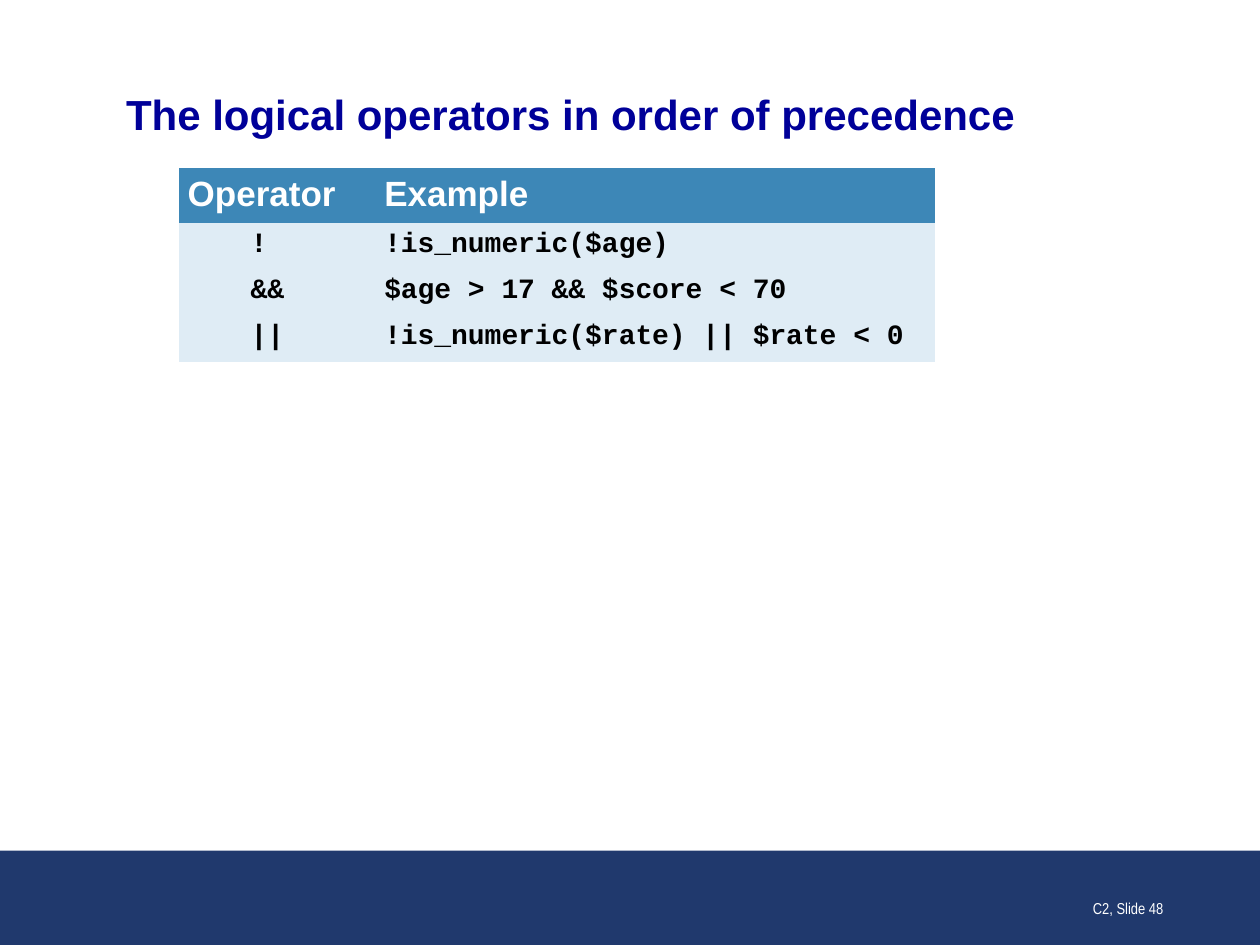
import dataclasses

import pptx
import pptx.dml.color
import pptx.enum.shapes
import pptx.enum.text
import pptx.oxml.ns
import pptx.util

ALIGN = pptx.enum.text.PP_ALIGN
ANCHOR = pptx.enum.text.MSO_ANCHOR
NO_STYLE_NO_GRID = "{2D5ABB26-0587-4C30-8999-92F81FD0307C}"
WIDTH, HEIGHT = pptx.util.Inches(10), pptx.util.Inches(7.5)


@dataclasses.dataclass(frozen=True)
class Theme:
    """Colours, fonts and type sizes of the slide."""
    title: str = "000099"
    band: str = "20396D"
    header: str = "3D87B7"
    body: str = "DFECF5"
    light: str = "FFFFFF"
    dark: str = "000000"
    sans: str = "Arial"
    narrow: str = "Arial Narrow"
    code: str = "Courier New"
    title_size: int = 24
    header_size: int = 20
    code_size: int = 16
    footer_size: int = 9


THEME = Theme()
ROWS = [
    ("Operator", "Example"),
    ("\t!", "!is_numeric($age)"),
    ("\t&&", "$age > 17 && $score < 70"),
    ("\t||", "!is_numeric($rate) || $rate < 0"),
]


def share(left, top, width, height):
    """Turn shares of the slide's size into a box in EMU."""
    return tuple(round(part * full) for part, full in
                 zip((left, top, width, height), (WIDTH, HEIGHT) * 2))


def set_fill(target, color):
    """Fill a shape or cell with one solid colour."""
    target.fill.solid()
    target.fill.fore_color.rgb = pptx.dml.color.RGBColor.from_string(color)


def write(tf, text, *, font, size, color, bold=False, align=ALIGN.LEFT,
          anchor=None):
    """Put one formatted paragraph into a text frame."""
    p = tf.paragraphs[0]
    p.alignment = align
    r = p.add_run()
    r.text = text
    r.font.name, r.font.size, r.font.bold = font, pptx.util.Pt(size), bold
    r.font.color.rgb = pptx.dml.color.RGBColor.from_string(color)
    if anchor is not None:
        tf.vertical_anchor = anchor


def add_title(s, box, text):
    """Place and format the title placeholder."""
    sp = s.shapes.title
    sp.left, sp.top, sp.width, sp.height = box
    tf = sp.text_frame
    tf.margin_left = tf.margin_right = tf.margin_top = tf.margin_bottom = 0
    tf.auto_size = pptx.enum.text.MSO_AUTO_SIZE.NONE
    write(tf, text, font=THEME.sans, size=THEME.title_size,
          color=THEME.title, bold=True, anchor=ANCHOR.MIDDLE)


def add_operator_table(s, box, rows):
    """Place the operator table, its header row a little taller."""
    left, top, width, height = box
    frame = s.shapes.add_table(len(rows), len(rows[0]), *box)
    table = frame.table
    table.horz_banding = False
    style = next(frame.element.iter(pptx.oxml.ns.qn("a:tableStyleId")))
    style.text = NO_STYLE_NO_GRID
    for column, part in zip(table.columns, (0.26, 0.74)):
        column.width = round(width * part)
    for row, part in zip(table.rows, (0.28, 0.24, 0.24, 0.24)):
        row.height = round(height * part)
    for i, values in enumerate(rows):
        look = (dict(font=THEME.sans, size=THEME.header_size,
                     color=THEME.light) if i == 0 else
                dict(font=THEME.code, size=THEME.code_size,
                     color=THEME.dark))
        for j, value in enumerate(values):
            cell = table.cell(i, j)
            set_fill(cell, THEME.header if i == 0 else THEME.body)
            cell.margin_left = cell.margin_right = pptx.util.Inches(0.07)
            write(cell.text_frame, value, bold=True, **look)


def add_footer(s, box, text):
    """Place the footer band and the slide number within it."""
    left, top, width, height = box
    sp = s.shapes.add_shape(pptx.enum.shapes.MSO_SHAPE.RECTANGLE, *box)
    sp.shadow.inherit = False
    set_fill(sp, THEME.band)
    sp.line.fill.background()
    number = s.shapes.add_textbox(
        left + round(width * 0.725), top + round(height * 0.11),
        round(width * 0.208), round(height * 0.67))
    tf = number.text_frame
    tf.word_wrap = True
    write(tf, text, font=THEME.narrow, size=THEME.footer_size,
          color=THEME.light, align=ALIGN.RIGHT, anchor=ANCHOR.BOTTOM)


def main():
    """Build the slide and save it."""
    prs = pptx.Presentation()
    prs.slide_width, prs.slide_height = WIDTH, HEIGHT
    s = prs.slides.add_slide(prs.slide_layouts[5])
    add_footer(s, share(0, 0.9, 1, 0.1), "C2, Slide 48")
    add_title(s, share(0.1, 0.09, 0.8, 0.06),
              "The logical operators in order of precedence")
    add_operator_table(s, share(0.142, 0.178, 0.6, 0.195), ROWS)
    prs.save("out.pptx")


if __name__ == "__main__":
    main()
